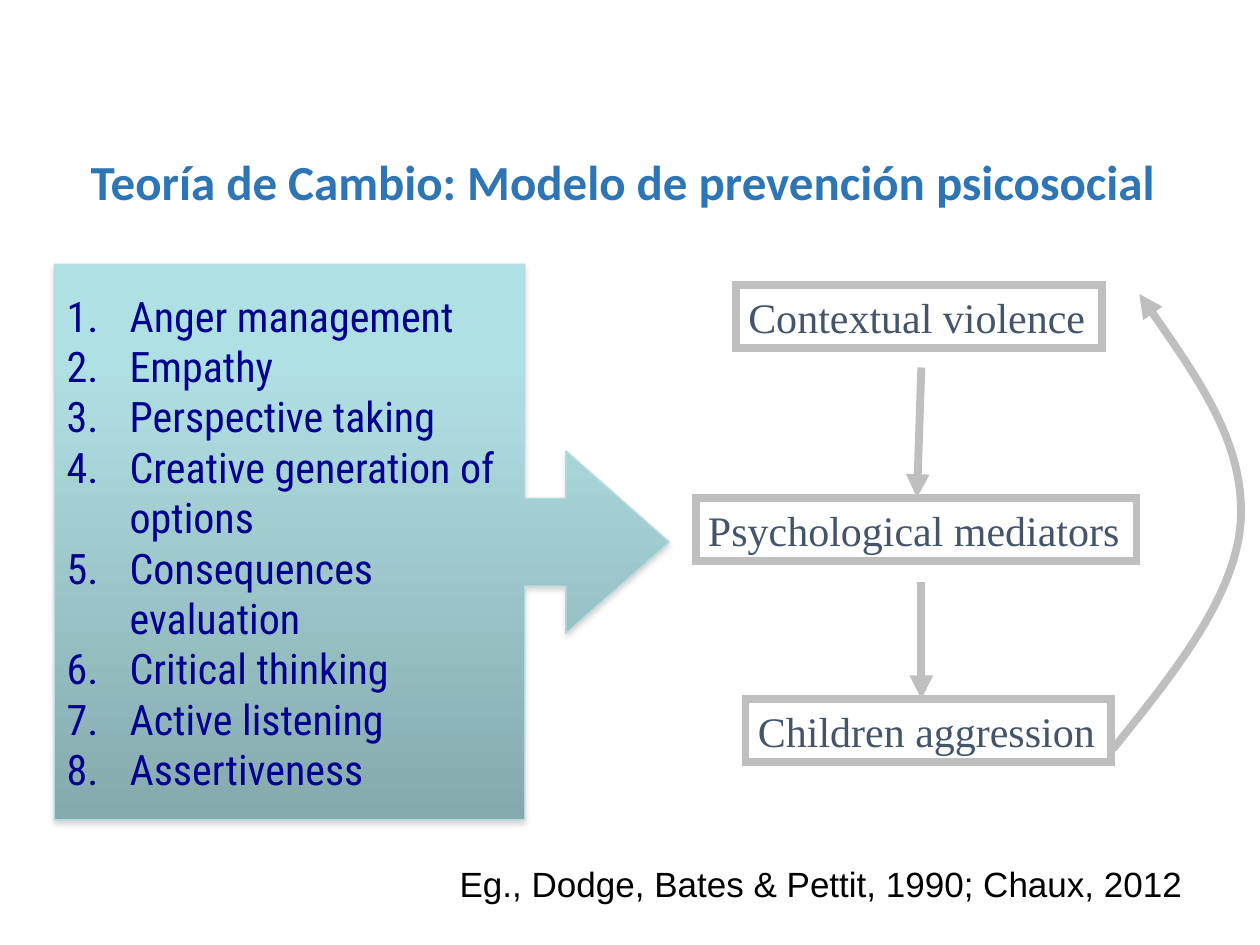
from lxml.etree import SubElement
from pptx import Presentation
from pptx.dml.color import RGBColor
from pptx.enum.shapes import MSO_CONNECTOR, MSO_SHAPE
from pptx.enum.text import MSO_ANCHOR, MSO_AUTO_SIZE, PP_ALIGN
from pptx.oxml.ns import qn
from pptx.util import Pt

GREY = RGBColor(0xBF, 0xBF, 0xBF)
SLATE = RGBColor(0x44, 0x54, 0x6A)
BLUE = RGBColor(0x2E, 0x75, 0xB6)
NAVY = RGBColor(0x00, 0x00, 0x90)
BLACK = RGBColor(0x00, 0x00, 0x00)
EDGE = RGBColor(0xB6, 0xDC, 0xDF)
SHADOW = RGBColor(0x80, 0x80, 0x80)
GRADIENT = [(0, RGBColor(0xAF, 0xE0, 0xE4)),
            (20, RGBColor(0xAF, 0xDE, 0xE2)),
            (100, RGBColor(0x85, 0xAA, 0xAD))]

TITLE_FONT = dict(name="Calibri", size=Pt(28), bold=True)
LIST_FONT = dict(name="Roboto Condensed", size=Pt(24))
BOX_FONT = dict(name="Times New Roman", size=Pt(24))
SOURCE_FONT = dict(name="Arial", size=Pt(20))

SKILLS = ["Anger management", "Empathy", "Perspective taking",
          "Creative generation of options", "Consequences evaluation",
          "Critical thinking", "Active listening", "Assertiveness"]

# Text, left, top, width
BOXES = [("Contextual violence", 420.5, 163, 209),
         ("Psychological mediators", 397.5, 284.5, 252),
         ("Children aggression", 426, 399.5, 209)]
ARROWS = [(526.5, 210, 524, 284.5), (526.5, 332.5, 526.5, 399.5)]
# Start point, then three Bezier points for each of two segments
FEEDBACK = [(636, 428), (671, 384.5), (706, 341), (709, 298),
            (711.5, 254), (681, 211), (651, 168)]


def sub(parent, tag, **attrs):
    return SubElement(parent, qn(tag), attrs)


def write(p, text, font, color):
    r = p.add_run()
    r.text = text
    for key, value in font.items():
        setattr(r.font, key, value)
    r.font.color.rgb = color


def set_line(shape, color, width):
    shape.line.color.rgb = color
    shape.line.width = Pt(width)
    return shape.line._get_or_add_ln()


def add_label(s, text, bounds, font, color, align, **frame):
    tf = s.shapes.add_textbox(*map(Pt, bounds)).text_frame
    tf.word_wrap = True
    for key, value in frame.items():
        setattr(tf, key, value)
    p = tf.paragraphs[0]
    p.alignment = align
    write(p, text, font, color)
    return p


def add_box(s, text, left, top, width):
    sp = s.shapes.add_shape(MSO_SHAPE.RECTANGLE, *map(Pt, (left, top, width, 36)))
    sp.shadow.inherit = False
    sp.fill.background()
    sub(set_line(sp, GREY, 4.5), "a:miter", lim="800000")
    tf = sp.text_frame
    tf.word_wrap = False
    tf.auto_size = MSO_AUTO_SIZE.SHAPE_TO_FIT_TEXT
    tf.vertical_anchor = MSO_ANCHOR.TOP
    p = tf.paragraphs[0]
    p.alignment = PP_ALIGN.LEFT
    write(p, text, BOX_FONT, SLATE)


def add_arrow(s, *ends):
    line = s.shapes.add_connector(MSO_CONNECTOR.STRAIGHT, *map(Pt, ends))
    sub(set_line(line, GREY, 4.5), "a:tailEnd", type="triangle")
    sub(line._element.spPr, "a:effectLst")


def add_curve(s, points):
    start, *rest = [(Pt(x), Pt(y)) for x, y in points]
    builder = s.shapes.build_freeform(*start)
    builder.add_line_segments(rest, close=False)
    sp = builder.convert_to_shape()
    sp.shadow.inherit = False
    sp.fill.background()
    sub(set_line(sp, GREY, 4.5), "a:tailEnd", type="triangle")
    # Turn every three straight segments into one Bezier segment
    outline = sp._element.spPr.find(".//" + qn("a:path"))
    segments = outline.findall(qn("a:lnTo"))
    for i in range(0, len(segments), 3):
        bezier = sub(outline, "a:cubicBezTo")
        for segment in segments[i:i + 3]:
            bezier.append(segment[0])
            outline.remove(segment)


def add_callout(s, items):
    sp = s.shapes.add_shape(MSO_SHAPE.RIGHT_ARROW_CALLOUT,
                            *map(Pt, (31, 151, 351.5, 317.5)))
    for i, value in enumerate((0.158, 0.164, 0.186, 0.765)):
        sp.adjustments[i] = value
    set_line(sp, EDGE, 0.75)

    # Gradient from top to bottom
    sp.fill.gradient()
    sp.fill.gradient_angle = 270
    stops = sp._element.spPr.find(".//" + qn("a:gsLst"))
    for stop in list(stops):
        stops.remove(stop)
    for pos, color in GRADIENT:
        stop = sub(stops, "a:gs", pos=str(pos * 1000))
        sub(stop, "a:srgbClr", val=str(color))

    # Soft shadow below
    sp.shadow.inherit = False
    effects = sp._element.spPr.find(qn("a:effectLst"))
    shadow = sub(effects, "a:outerShdw", blurRad=str(Pt(3.1)),
                 dist=str(Pt(1.8)), dir="5400000", rotWithShape="0")
    sub(sub(shadow, "a:srgbClr", val=str(SHADOW)), "a:alpha", val="35000")

    # Numbered list
    tf = sp.text_frame
    tf.word_wrap = True
    tf.vertical_anchor = MSO_ANCHOR.MIDDLE
    for i, item in enumerate(items):
        p = tf.add_paragraph() if i else tf.paragraphs[0]
        p.alignment = PP_ALIGN.LEFT
        pPr = p._p.get_or_add_pPr()
        pPr.set("marL", str(Pt(36)))
        pPr.set("indent", str(-Pt(36)))
        sub(pPr, "a:buFont", typeface="+mj-lt")
        sub(pPr, "a:buAutoNum", type="arabicPeriod")
        write(p, item, LIST_FONT, NAVY)


def main():
    prs = Presentation()
    prs.slide_width, prs.slide_height = Pt(720), Pt(540)
    s = prs.slides.add_slide(prs.slide_layouts[6])

    # Causal chain with feedback
    for box in BOXES:
        add_box(s, *box)
    for arrow in ARROWS:
        add_arrow(s, *arrow)
    add_curve(s, FEEDBACK)

    # Title
    p = add_label(s, "Teoría de Cambio: Modelo de prevención psicosocial",
                  (21, 78.5, 669.5, 54.5), TITLE_FONT, BLUE, PP_ALIGN.CENTER,
                  vertical_anchor=MSO_ANCHOR.MIDDLE)
    p.line_spacing = 0.9

    # Skills and source
    add_callout(s, SKILLS)
    add_label(s, "Eg., Dodge, Bates & Pettit, 1990; Chaux, 2012",
              (247, 489.5, 436, 31.5), SOURCE_FONT, BLACK, PP_ALIGN.RIGHT,
              auto_size=MSO_AUTO_SIZE.SHAPE_TO_FIT_TEXT)

    prs.save("out.pptx")


if __name__ == "__main__":
    main()
